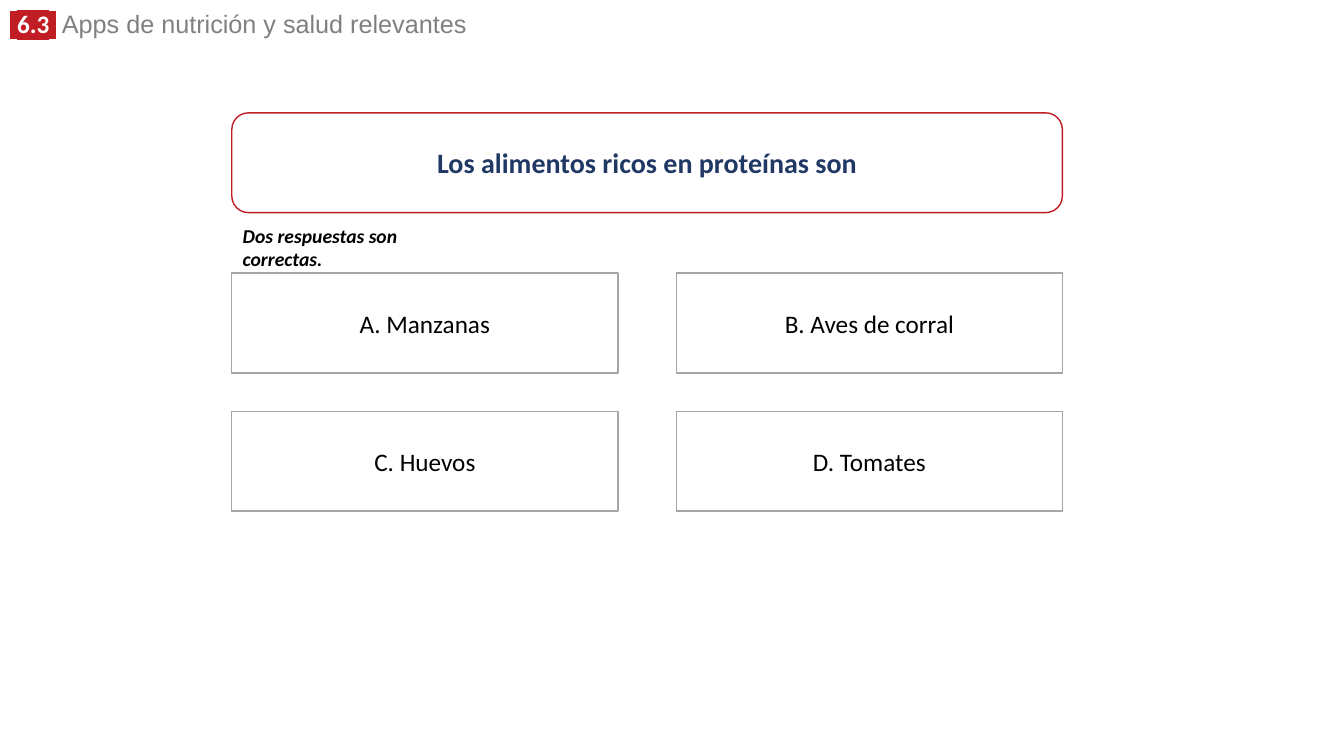
from lxml.etree import SubElement
from pptx import Presentation
from pptx.dml.color import RGBColor
from pptx.enum.shapes import MSO_SHAPE
from pptx.enum.text import MSO_ANCHOR, MSO_AUTO_SIZE, PP_ALIGN
from pptx.oxml.ns import qn
from pptx.util import Pt

RED, WHITE, GREY, NAVY, BLACK = "C01E24", "FFFFFF", "808080", "203864", "000000"
OPTION_LINE = "A5A5A5"
OPTIONS = ["A. Manzanas", "B. Aves de corral", "C. Huevos", "D. Tomates"]


def rgb(color):
    return RGBColor.from_string(color)


def add_run(p, text, size, color, font="Calibri", bold=False, italic=False, highlight=None):
    r = p.add_run()
    r.text = text
    r.font.size = Pt(size)
    r.font.bold = bold
    r.font.italic = italic
    r.font.color.rgb = rgb(color)
    if highlight:
        mark = SubElement(r.font.fill._xPr, qn("a:highlight"))
        SubElement(mark, qn("a:srgbClr"), val=highlight)
    r.font.name = font


def add_title(s, x, y, w, h, number, text):
    sp = s.shapes.title
    sp.left, sp.top, sp.width, sp.height = Pt(x), Pt(y), Pt(w), Pt(h)
    tf = sp.text_frame
    tf.auto_size = MSO_AUTO_SIZE.NONE
    tf.vertical_anchor = MSO_ANCHOR.TOP
    p = tf.paragraphs[0]
    p.alignment = PP_ALIGN.LEFT
    p.line_spacing = 0.8
    for part, font in ((" ", "Arial"), (number, "Calibri"), (" ", "Arial")):
        add_run(p, part, 18, WHITE, font, bold=True, highlight=RED)
    add_run(p, " " + text, 18, GREY, "Arial")


def add_card(s, kind, x, y, w, h, line, text, size, color, bold=False):
    sp = s.shapes.add_shape(kind, Pt(x), Pt(y), Pt(w), Pt(h))
    sp.shadow.inherit = False
    sp.fill.solid()
    sp.fill.fore_color.rgb = rgb(WHITE)
    sp.line.color.rgb = rgb(line)
    sp.line.width = Pt(1)
    tf = sp.text_frame
    tf.word_wrap = True
    tf.vertical_anchor = MSO_ANCHOR.MIDDLE
    p = tf.paragraphs[0]
    p.alignment = PP_ALIGN.CENTER
    add_run(p, text, size, color, bold=bold)


def add_note(s, x, y, w, h, text):
    tf = s.shapes.add_textbox(Pt(x), Pt(y), Pt(w), Pt(h)).text_frame
    tf.word_wrap = True
    add_run(tf.paragraphs[0], text, 14, BLACK, bold=True, italic=True)


def add_options(s, x, y, w, h, options, gap_x=41.7, gap_y=27.4):
    """Lay the options out in two columns, row by row."""
    card_w = (w - gap_x) / 2
    rows = (len(options) + 1) // 2
    card_h = (h - gap_y * (rows - 1)) / rows
    for i, text in enumerate(options):
        row, col = divmod(i, 2)
        add_card(s, MSO_SHAPE.RECTANGLE, x + col * (card_w + gap_x),
                 y + row * (card_h + gap_y), card_w, card_h,
                 OPTION_LINE, text, 18, BLACK)


def add_quiz(s, x, y, w, h, question, note, options):
    add_card(s, MSO_SHAPE.ROUNDED_RECTANGLE, x, y, w, 71.3, RED, question, 20, NAVY, bold=True)
    add_options(s, x, y + 114.5, w, h - 114.5, options)
    add_note(s, x + 0.7, y + 75.6, 161.3, 24.5, note)


def main():
    prs = Presentation()
    prs.slide_width, prs.slide_height = Pt(960), Pt(540)
    s = prs.slides.add_slide(prs.slide_layouts[5])
    add_title(s, 0, 6.5, 685.4, 25.2, "6.3", "Apps de nutrición y salud relevantes")
    add_quiz(s, 165.6, 80.6, 593.3, 284.5, "Los alimentos ricos en proteínas son",
             "Dos respuestas son correctas.", OPTIONS)
    prs.save("out.pptx")


if __name__ == "__main__":
    main()
